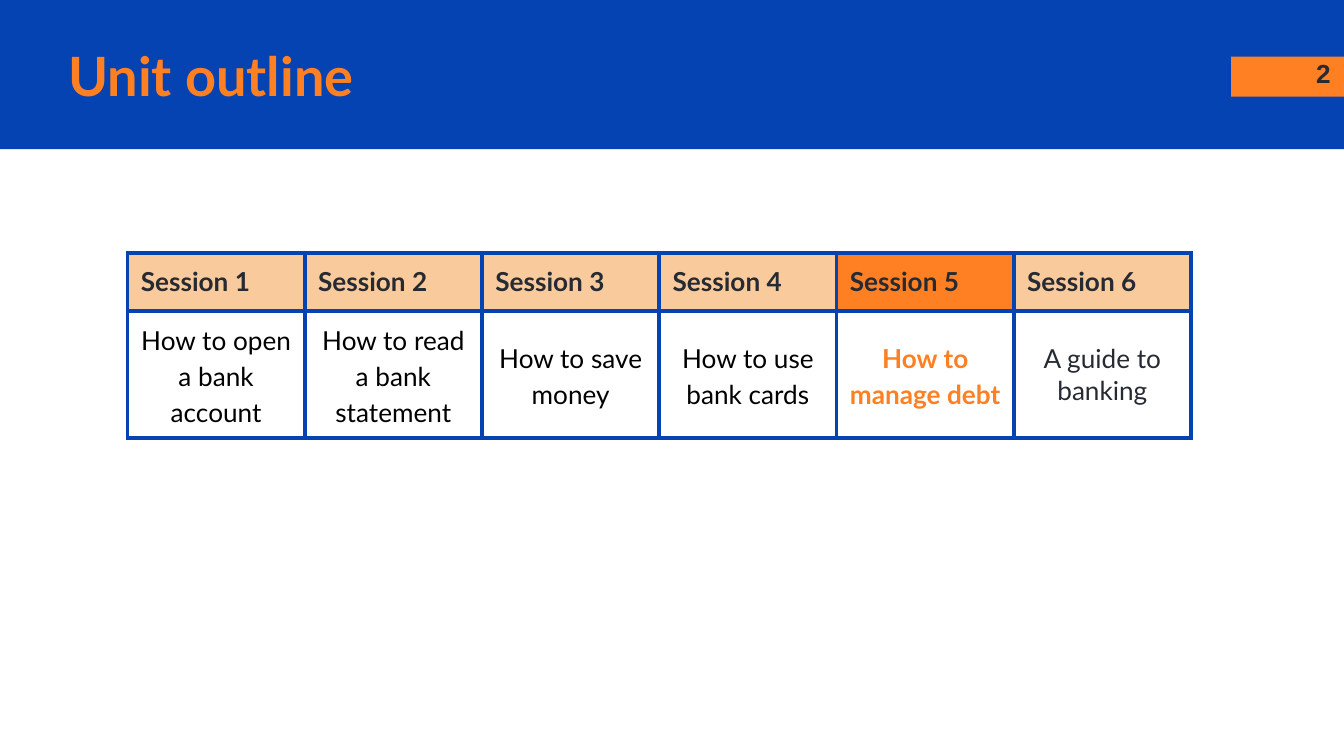
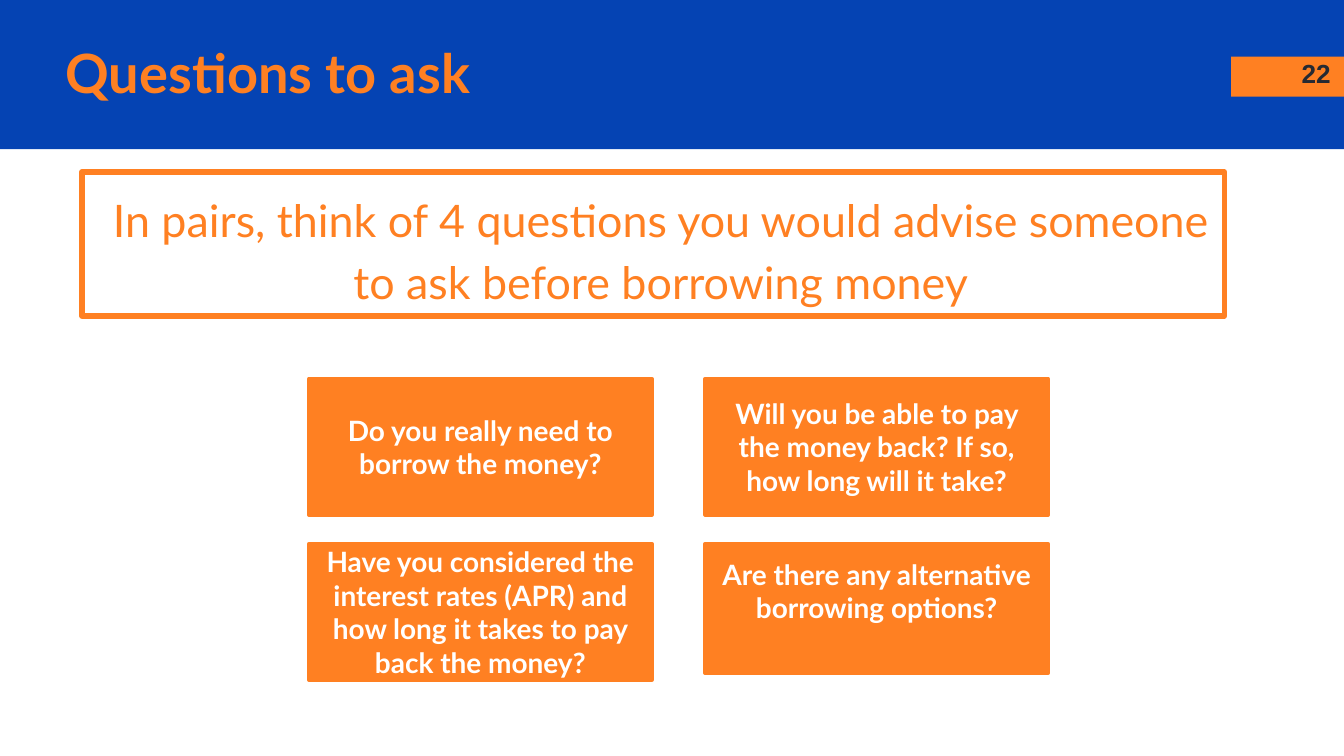
import pptx
import pptx.util
import pptx.dml.color
import pptx.enum.shapes
import pptx.enum.text
import pptx.oxml.ns
import lxml.etree

Cm, Pt = pptx.util.Cm, pptx.util.Pt
RGB = pptx.dml.color.RGBColor
ALIGN = pptx.enum.text.PP_ALIGN
ANCHOR = pptx.enum.text.MSO_ANCHOR
RECT = pptx.enum.shapes.MSO_SHAPE.RECTANGLE
qn = pptx.oxml.ns.qn

BLUE = RGB(0x05, 0x43, 0xB3)
ORANGE = RGB(0xFF, 0x80, 0x22)
PEACH = RGB(0xF9, 0xCB, 0x9C)
DARK = RGB(0x26, 0x2A, 0x33)
BLACK = RGB(0, 0, 0)
WHITE = RGB(255, 255, 255)

# Content
TOPICS = [
    "How to open a bank account",
    "How to read a bank statement",
    "How to save money",
    "How to use bank cards",
    "How to manage debt",
    "A guide to banking",
]
NOW = 4  # column of the current session
PROMPT = ("In pairs, think of 4 questions you would advise someone "
          "to ask before borrowing money")
# text, height, anchor
ASKS = [
    ("Do you really need to borrow the money?", 2.57, ANCHOR.MIDDLE),
    ("Will you be able to pay the money back? If so, how long will it take?",
     2.57, ANCHOR.MIDDLE),
    ("Have you considered the interest rates (APR) and how long it takes "
     "to pay back the money?", 2.57, ANCHOR.MIDDLE),
    ("Are there any alternative borrowing options?", 2.44, ANCHOR.TOP),
]


def pad(item, gap=0.25):
    item.margin_left = item.margin_right = Cm(gap)
    item.margin_top = item.margin_bottom = Cm(gap)


def write(frame, text, size, color, bold=True, align=ALIGN.LEFT,
          space=1.0, face="Lato"):
    frame.text = text
    para = frame.paragraphs[0]
    para.alignment = align
    para.line_spacing = space
    font = para.runs[0].font
    font.name, font.size, font.bold = face, Pt(size), bold
    font.color.rgb = color
    return para


def add_box(slide, place, fill=None, line=None, width=2.25):
    box = slide.shapes.add_shape(RECT, *map(Cm, place))
    box.shadow.inherit = False
    if fill is None:
        box.fill.background()
    else:
        box.fill.solid()
        box.fill.fore_color.rgb = fill
    if line is None:
        box.line.fill.background()
    else:
        box.line.color.rgb = line
        box.line.width = Pt(width)
    pad(box.text_frame)
    box.text_frame.word_wrap = True
    return box


def add_text(slide, place, anchor):
    frame = slide.shapes.add_textbox(*map(Cm, place)).text_frame
    frame.word_wrap = True
    frame.vertical_anchor = anchor
    pad(frame)
    return frame


def add_page(deck, title, left, top, number):
    """Start a slide with its band, title and page number."""
    slide = deck.slides.add_slide(deck.slide_layouts[6])
    add_box(slide, (0, 0, 25.4, 2.82), BLUE)
    add_box(slide, (23.27, 1.07, 2.13, 0.76), ORANGE)
    head = add_text(slide, (left, top, 21.49, 1.42), ANCHOR.MIDDLE)
    write(head, title, 29, ORANGE)
    page = add_text(slide, (23.88, 0.84, 1.52, 1.09), ANCHOR.TOP)
    write(page, str(number), 14, DARK, align=ALIGN.RIGHT, face="Arial")
    return slide


def add_edges(cell):
    props = cell._tc.get_or_add_tcPr()
    for side in ("lnL", "lnR", "lnT", "lnB"):
        edge = lxml.etree.SubElement(props, qn("a:" + side), w=str(Pt(2.25)))
        fill = lxml.etree.SubElement(edge, qn("a:solidFill"))
        lxml.etree.SubElement(fill, qn("a:srgbClr"), val=str(BLUE))


def add_plan(slide):
    count = len(TOPICS)
    table = slide.shapes.add_table(2, count, Cm(2.41), Cm(4.78),
                                   Cm(3.35 * count), Cm(3.49)).table
    table.first_row = table.horz_banding = False
    table.rows[0].height, table.rows[1].height = Cm(1.08), Cm(2.41)
    for col, topic in enumerate(TOPICS):
        table.columns[col].width = Cm(3.35)
        now, last = col == NOW, col == count - 1
        head, body = table.cell(0, col), table.cell(1, col)
        for cell in (head, body):
            add_edges(cell)
        head.fill.solid()
        head.fill.fore_color.rgb = ORANGE if now else PEACH
        pad(head)
        write(head.text_frame, f"Session {col + 1}", 14, DARK)
        body.fill.background()
        body.vertical_anchor = ANCHOR.MIDDLE
        pad(body, 0.25 if last else 0.18)
        color = ORANGE if now else DARK if last else BLACK
        write(body.text_frame, topic, 14, color, now, ALIGN.CENTER,
              1.0 if last else 1.15)


def add_asks(slide):
    # Framed prompt
    box = add_box(slide, (1.55, 3.25, 21.59, 2.72), line=ORANGE, width=3)
    box.text_frame.vertical_anchor = ANCHOR.TOP
    para = write(box.text_frame, PROMPT, 24, ORANGE, False, ALIGN.CENTER, 1.15)
    para._p.get_or_add_pPr().set("marL", str(Cm(0.28)))
    # Two by two grid of questions
    for i, (text, high, anchor) in enumerate(ASKS):
        row, col = divmod(i, 2)
        place = (5.84 + 7.49 * col, 7.16 + 3.12 * row, 6.48, high)
        box = add_box(slide, place, ORANGE, ORANGE)
        box.text_frame.vertical_anchor = anchor
        write(box.text_frame, text, 15, WHITE, align=ALIGN.CENTER)


def main():
    deck = pptx.Presentation()
    deck.slide_width, deck.slide_height = Cm(25.4), Cm(14.29)
    add_plan(add_page(deck, "Unit outline", 1.04, 0.71, 2))
    add_asks(add_page(deck, "Questions to ask", 0.99, 0.64, 22))
    deck.save("out.pptx")


if __name__ == "__main__":
    main()
